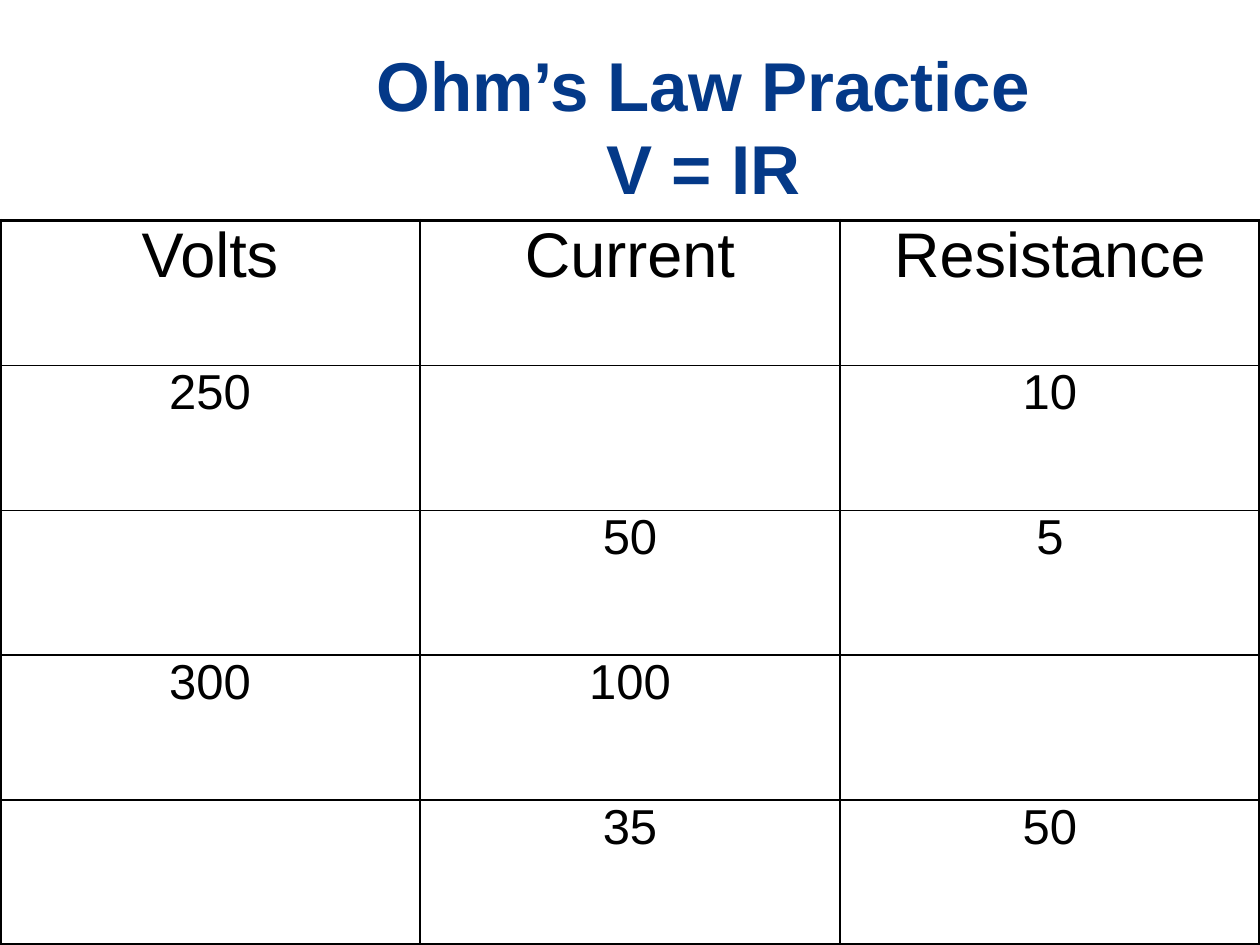
from typing import NamedTuple

from lxml.etree import SubElement
from pptx import Presentation
from pptx.dml.color import RGBColor
from pptx.enum.text import MSO_ANCHOR as Anchor, MSO_AUTO_SIZE as AutoSize, PP_ALIGN as Align
from pptx.oxml.ns import qn
from pptx.util import Pt

FONT = "Arial"
BLACK = "000000"
NAVY = "043988"
THIN, THICK = 1, 2.25


class Practice(NamedTuple):
    volts: str
    current: str
    resistance: str


ROWS = [
    Practice("Volts", "Current", "Resistance"),
    Practice("250", "", "10"),
    Practice("", "50", "5"),
    Practice("300", "100", ""),
    Practice("", "35", "50"),
]


def color(hex_code: str) -> RGBColor:
    return RGBColor.from_string(hex_code)


def format_text(frame, size: float, hex_code: str, bold: bool = False) -> None:
    for paragraph in frame.paragraphs:
        paragraph.alignment = Align.CENTER
        font = paragraph.font
        for target in [font] + [run.font for run in paragraph.runs]:
            target.name = FONT
            target.size = Pt(size)
            target.bold = bold
            target.color.rgb = color(hex_code)


def add_border(cell, side: str, width: float) -> None:
    line = SubElement(cell._tc.get_or_add_tcPr(), qn(f"a:ln{side}"), w=str(Pt(width)))
    fill = SubElement(line, qn("a:solidFill"))
    SubElement(fill, qn("a:srgbClr"), val=BLACK)


def fill_cell(cell, text: str, size: float, outer_sides: str) -> None:
    cell.margin_left = cell.margin_right = cell.margin_top = cell.margin_bottom = 0
    cell.vertical_anchor = Anchor.TOP
    cell.text_frame.text = text
    format_text(cell.text_frame, size, BLACK)
    for side in "LRTB":
        add_border(cell, side, THICK if side in outer_sides else THIN)
    cell.fill.background()


deck = Presentation()
deck.slide_width, deck.slide_height = Pt(720), Pt(540)
slide = deck.slides.add_slide(deck.slide_layouts[5])

# Title
heading = slide.shapes.title
heading.left, heading.top, heading.width, heading.height = Pt(96), Pt(24), Pt(612), Pt(95)
frame = heading.text_frame
frame.text = "Ohm’s Law Practice\vV = IR"
frame.word_wrap = True
frame.auto_size = AutoSize.NONE
frame.vertical_anchor = Anchor.MIDDLE
format_text(frame, 39.5, NAVY, bold=True)

# Practice table: thick outer frame, thin inner grid
last_row, last_column = len(ROWS) - 1, len(Practice._fields) - 1
practice = slide.shapes.add_table(
    last_row + 1, last_column + 1, Pt(0), Pt(126), Pt(720), Pt(414)).table
practice.first_row = practice.horz_banding = False

for r, values in enumerate(ROWS):
    for c, value in enumerate(values):
        edges = {"L": c == 0, "R": c == last_column, "T": r == 0, "B": r == last_row}
        outer = "".join(side for side, is_outer in edges.items() if is_outer)
        fill_cell(practice.cell(r, c), value, 36 if r == 0 else 28, outer)

deck.save("out.pptx")
